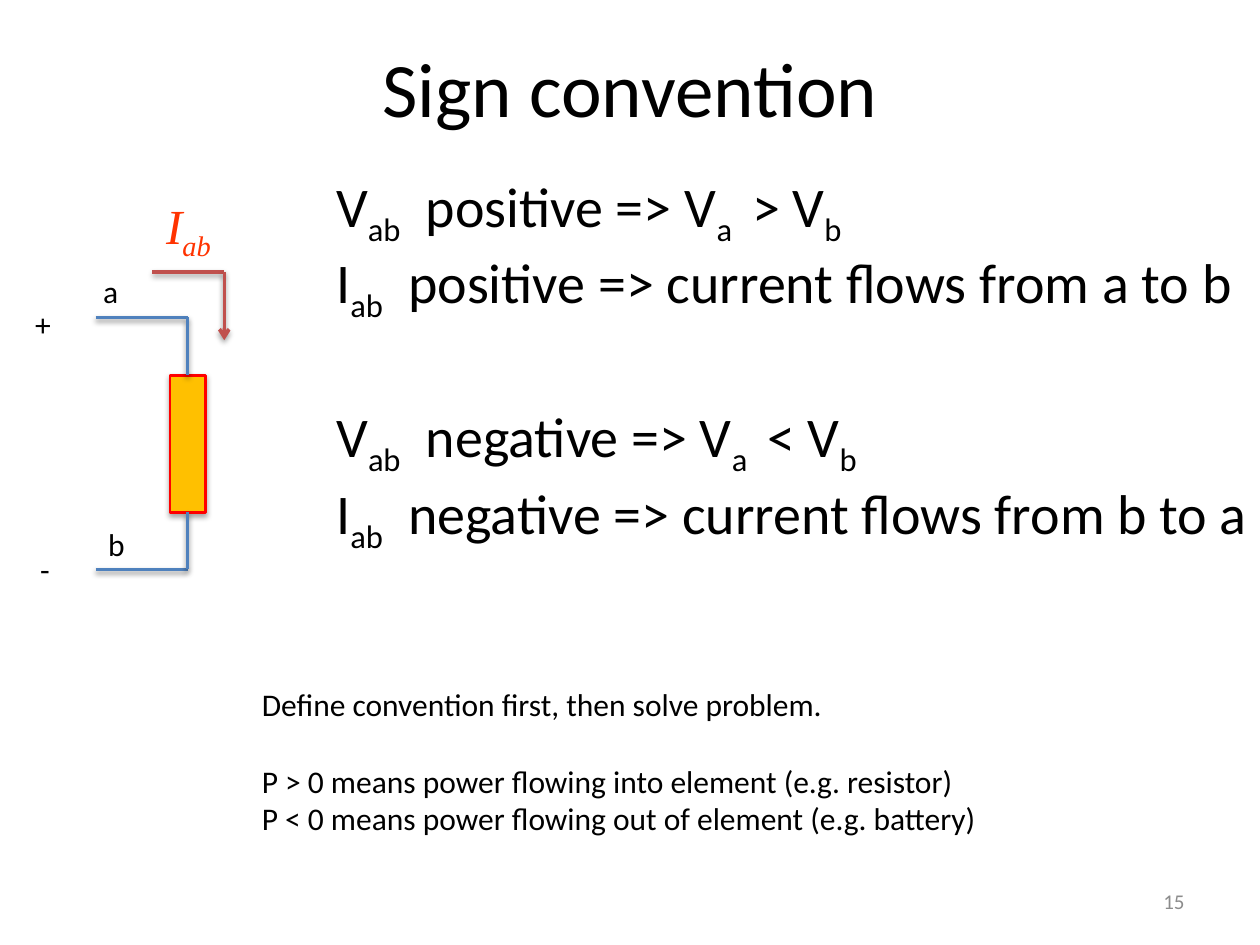
from lxml import etree
from pptx import Presentation
from pptx.dml.color import RGBColor
from pptx.enum import shapes, text
from pptx.oxml import ns
from pptx import util as u

COLUMNS, ROWS = 100, 75
BLACK, BLUE, RED = "000000", "4F81BD", "C0504D"


def color(value):
    return RGBColor.from_string(value)


class SlideBuilder:
    font = "Calibri"

    def __init__(self, presentation):
        self.column = presentation.slide_width / COLUMNS
        self.row = presentation.slide_height / ROWS
        self.slide = presentation.slides.add_slide(presentation.slide_layouts[6])

    def place(self, *lengths):
        units = (self.column, self.row) * 2
        return [round(length * unit) for length, unit in zip(lengths, units)]

    def shadow(self, shape, distance, opacity):
        properties = shape._element.spPr
        effects = etree.SubElement(properties, ns.qn("a:effectLst"))
        outer = etree.SubElement(
            effects, ns.qn("a:outerShdw"), blurRad=str(u.Pt(3.1)),
            dist=str(u.Pt(distance)), dir="5400000", rotWithShape="0")
        tone = etree.SubElement(outer, ns.qn("a:srgbClr"), val=BLACK)
        etree.SubElement(tone, ns.qn("a:alpha"), val=str(opacity * 1000))

    def text(self, box, lines, size, fill=BLACK, font=None, italic=False,
             align=text.PP_ALIGN.LEFT, anchor=text.MSO_ANCHOR.TOP,
             wrap=False, gaps=()):
        frame = self.slide.shapes.add_textbox(*self.place(*box)).text_frame
        frame.word_wrap = wrap
        frame.vertical_anchor = anchor
        for index, line in enumerate(lines):
            paragraph = frame.add_paragraph() if index else frame.paragraphs[0]
            paragraph.alignment = align
            paragraph.font.size = u.Pt(size)
            paragraph.font.name = font or self.font
            paragraph.font.italic = italic
            paragraph.font.color.rgb = color(fill)
            if index in gaps:
                paragraph.space_before = u.Pt(size * 1.22)
            for position, part in enumerate(line.split("|")):
                run = paragraph.add_run()
                run.text = part
                if position % 2:
                    run.font._element.set("baseline", "-25000")

    def rectangle(self, box, fill, outline):
        shape = self.slide.shapes.add_shape(
            shapes.MSO_SHAPE.RECTANGLE, *self.place(*box))
        shape.shadow.inherit = False
        shape._element.spPr.remove(shape._element.spPr.find(ns.qn("a:effectLst")))
        shape.fill.solid()
        shape.fill.fore_color.rgb = color(fill)
        shape.line.color.rgb = color(outline)
        shape.line.width = u.Pt(1.5)
        self.shadow(shape, 1.8, 35)

    def line(self, start, end, stroke, arrow=False):
        connector = self.slide.shapes.add_connector(
            shapes.MSO_CONNECTOR.STRAIGHT, *self.place(*start, *end))
        connector.line.color.rgb = color(stroke)
        connector.line.width = u.Pt(2)
        if arrow:
            etree.SubElement(connector.line._get_or_add_ln(),
                             ns.qn("a:tailEnd"), type="arrow")
        self.shadow(connector, 1.6, 38)


def main():
    presentation = Presentation()
    presentation.slide_width = u.Inches(10)
    presentation.slide_height = u.Inches(7.5)
    builder = SlideBuilder(presentation)
    middle, center = text.MSO_ANCHOR.MIDDLE, text.PP_ALIGN.CENTER

    builder.text((5, 0.6, 90, 12.5), ["Sign convention"], 44,
                 align=center, anchor=middle, wrap=True)
    builder.text((8.7, 13.1, 12.5, 10.1), ["I|ab"], 28, "FF3300",
                 "Times New Roman", True, center, middle, True)

    for label, left, top, width in (("a", 7.2, 21.1, 3.2), ("b", 7.6, 41.2, 3.4),
                                    ("+", 1.8, 23.7, 3.3), ("-", 2.2, 43.2, 2.8)):
        builder.text((left, top, width, 4), [label], 18)

    for sign, relation, route, top, width in (
            ("positive", ">", "a to b", 13.1, 74.3),
            ("negative", "<", "b to a", 31.4, 75.5)):
        builder.text((25.7, top, width, 11.8),
                     [f"V|ab|  {sign} => V|a | {relation} V|b",
                      f"I|ab|  {sign} => current flows from {route}"], 32)

    terminal, wire = 7.6, 14.9
    resistor_top, resistor_bottom = 29.8, 40.6
    builder.rectangle((wire - 1.4, resistor_top, 2.8, 10.9), "FFC000", "FF0000")
    for level, contact in ((25.2, resistor_top), (45.2, resistor_bottom)):
        builder.line((terminal, level), (wire, level), BLUE)
        builder.line((wire, level), (wire, contact), BLUE)

    corner = (17.8, 21.6)
    builder.line((12.1, 21.6), corner, RED)
    builder.line(corner, (17.8, 27), RED, arrow=True)

    builder.text((19.8, 53.9, 63.4, 13.1),
                 ["Define convention first, then solve problem.",
                  "P > 0 means power flowing into element (e.g. resistor)",
                  "P < 0 means power flowing out of element (e.g. battery)"],
                 18, wrap=True, gaps=(1,))
    builder.text((71.7, 69.5, 23.3, 4), ["15"], 12, "8C8C8C",
                 align=text.PP_ALIGN.RIGHT, anchor=middle, wrap=True)
    presentation.save("out.pptx")


if __name__ == "__main__":
    main()
